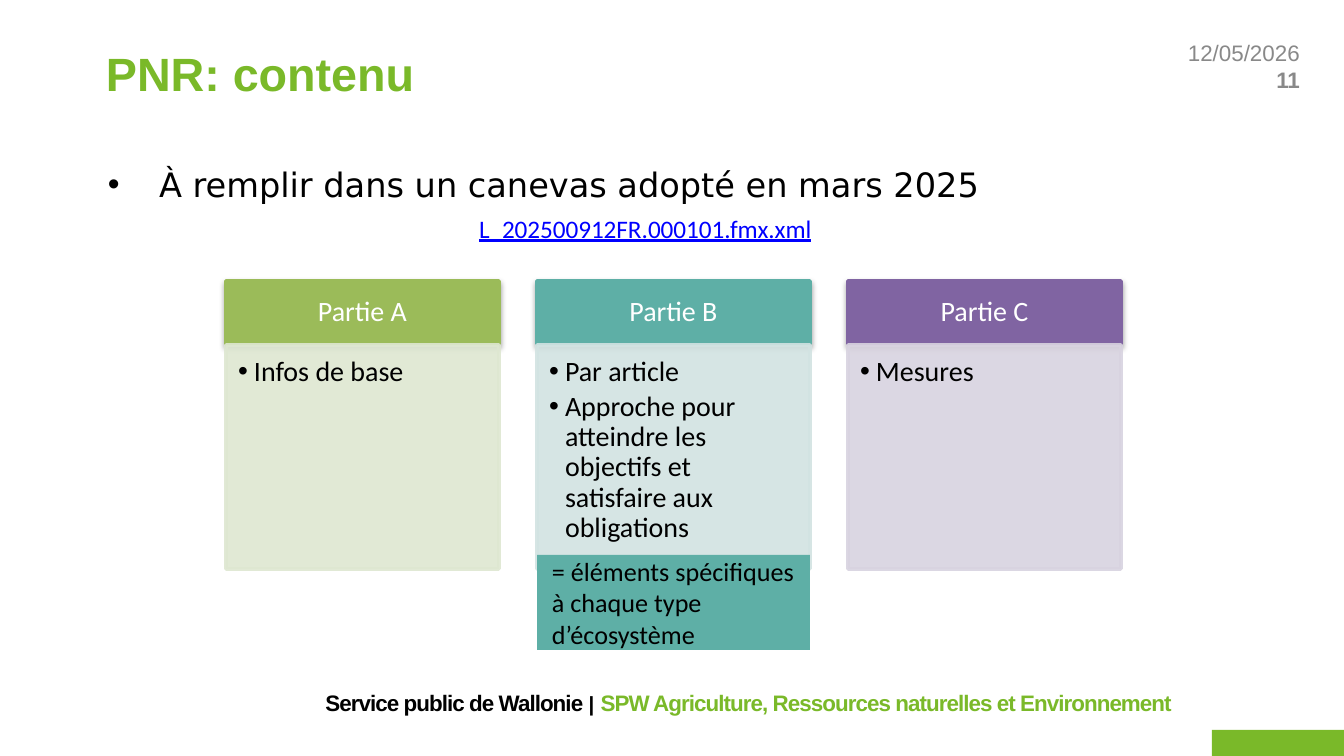
from dataclasses import dataclass

from lxml.etree import SubElement
from pptx import Presentation
from pptx.dml.color import RGBColor
from pptx.enum.shapes import MSO_SHAPE as Shape
from pptx.enum.text import MSO_ANCHOR as Anchor, PP_ALIGN as Align
from pptx.oxml.ns import qn
from pptx.util import Emu, Pt

SCALE = 914400 / 134.4


@dataclass(frozen=True)
class Theme:
    green: str = "7AB929"
    grey: str = "898989"
    black: str = "000000"
    white: str = "FFFFFF"
    link: str = "0000FF"
    teal: str = "5EAFA6"
    sans: str = "Arial"
    body: str = "Calibri"
    wide: str = "DejaVu Sans"
    title: float = 25
    lead: float = 18
    card: float = 15
    note: float = 14
    file: float = 13.5
    small: float = 12
    bar: float = 11


T = Theme()
CARDS = [
    ("Partie A", "9BBB59", "DEE7D1", ["Infos de base"]),
    ("Partie B", T.teal, "D2E3E2",
     ["Par article",
      "Approche pour atteindre les objectifs et satisfaire aux obligations"]),
    ("Partie C", "8064A2", "D8D3E0", ["Mesures"]),
]


def px(n):
    return Emu(round(n * SCALE))


def rgb(code):
    return RGBColor.from_string(code)


def frame(shape, pad=(13, 7, 13, 7), anchor=Anchor.TOP):
    tf = shape.text_frame
    tf.word_wrap = True
    tf.vertical_anchor = anchor
    (tf.margin_left, tf.margin_top,
     tf.margin_right, tf.margin_bottom) = map(px, pad)
    return tf


def label(slide, box, anchor=Anchor.TOP):
    return frame(slide.shapes.add_textbox(*map(px, box)), anchor=anchor)


def block(slide, box, fill, line=None):
    shape = slide.shapes.add_shape(Shape.RECTANGLE, *map(px, box))
    shape.shadow.inherit = False
    shape.fill.solid()
    shape.fill.fore_color.rgb = rgb(fill)
    if line:
        shape.line.color.rgb = rgb(line)
        shape.line.width = Pt(2)
    else:
        shape.line.fill.background()
    return shape


def fade(node, part):
    """Make a colour node partly opaque, in percent."""
    SubElement(node, qn("a:alpha"), val=str(part * 1000))


def shade(shape):
    """Drop a soft shadow straight down."""
    effects = shape._element.spPr.find(qn("a:effectLst"))
    outer = SubElement(effects, qn("a:outerShdw"), blurRad=str(Pt(3.1)),
                       dist=str(Pt(1.6)), dir="5400000", rotWithShape="0")
    fade(SubElement(outer, qn("a:srgbClr"), val=T.black), 38)


def para(tf, first=True, align=Align.LEFT):
    p = tf.paragraphs[0] if first else tf.add_paragraph()
    p.alignment = align
    return p


def bullet(p, indent):
    props = p._p.get_or_add_pPr()
    props.set("marL", str(px(indent)))
    props.set("indent", str(px(-indent)))
    SubElement(props, qn("a:buFont"), typeface=T.sans)
    SubElement(props, qn("a:buChar"), char="•")


def run(p, text, size, face, color, bold=False, line=False, space=0):
    r = p.add_run()
    r.text = text
    font = r.font
    font.size, font.name, font.bold = Pt(size), face, bold
    font.color.rgb = rgb(color)
    if line:
        font.underline = True
    if space:
        r._r.get_or_add_rPr().set("spc", str(space))


def card(slide, left, name, dark, pale, items):
    head = block(slide, (left, 281, 273, 63), dark, dark)
    shade(head)
    p = para(frame(head, (16, 9, 16, 9), Anchor.MIDDLE), align=Align.CENTER)
    p.line_spacing = 0.9
    run(p, name, T.card, T.body, T.white)

    panel = block(slide, (left, 345, 273, 224), pale, pale)
    for node in list(panel._element.spPr.iter(qn("a:srgbClr"))):
        fade(node, 90)
    tf = frame(panel, (12, 12, 16, 17))
    for i, item in enumerate(items):
        p = para(tf, i == 0)
        p.level = 1
        p.line_spacing = 0.9
        p.space_after = Pt(2.7)
        bullet(p, 16)
        run(p, item, T.card, T.body, T.black)


def edge(slide):
    """Date, page number, corner block and footer."""
    tf = label(slide, (1048, 32, 265, 79))
    run(para(tf, align=Align.RIGHT), "12/05/2026", T.small, T.sans, T.grey)
    run(para(tf, False, Align.RIGHT), "11", T.small, T.sans, T.grey, True)
    block(slide, (1212, 730, 132, 26), T.green)
    p = para(label(slide, (0, 683, 1185, 40), Anchor.MIDDLE),
             align=Align.RIGHT)
    for text, size, color in [
        ("Service public de Wallonie ", T.small, T.black),
        ("|", T.bar, T.black),
        (" ", T.small, T.black),
        ("SPW Agriculture, Ressources naturelles et Environnement",
         T.small, T.green),
    ]:
        run(p, text, size, T.sans, color, True, space=-50)


def main():
    deck = Presentation()
    deck.slide_width, deck.slide_height = px(1344), px(756)
    slide = deck.slides.add_slide(deck.slide_layouts[6])
    edge(slide)

    p = para(label(slide, (93, 0, 1159, 146), Anchor.MIDDLE))
    run(p, "PNR: contenu", T.title, T.sans, T.green, True)
    p = para(label(slide, (95, 157, 1156, 513)))
    bullet(p, 51)
    run(p, "À remplir dans un canevas adopté en mars 2025",
        T.lead, T.wide, T.black)
    p = para(label(slide, (466, 206, 410, 44)))
    run(p, "L_202500912FR.000101.fmx.xml", T.file, T.body, T.link, line=True)

    for i, data in enumerate(CARDS):
        card(slide, 226 + 311 * i, *data)

    note = block(slide, (537, 555, 273, 95), T.teal)
    p = para(frame(note, (15, 8, 15, 8), Anchor.MIDDLE))
    run(p, "= éléments spécifiques à chaque type d’écosystème",
        T.note, T.body, T.black)
    deck.save("out.pptx")


if __name__ == "__main__":
    main()
